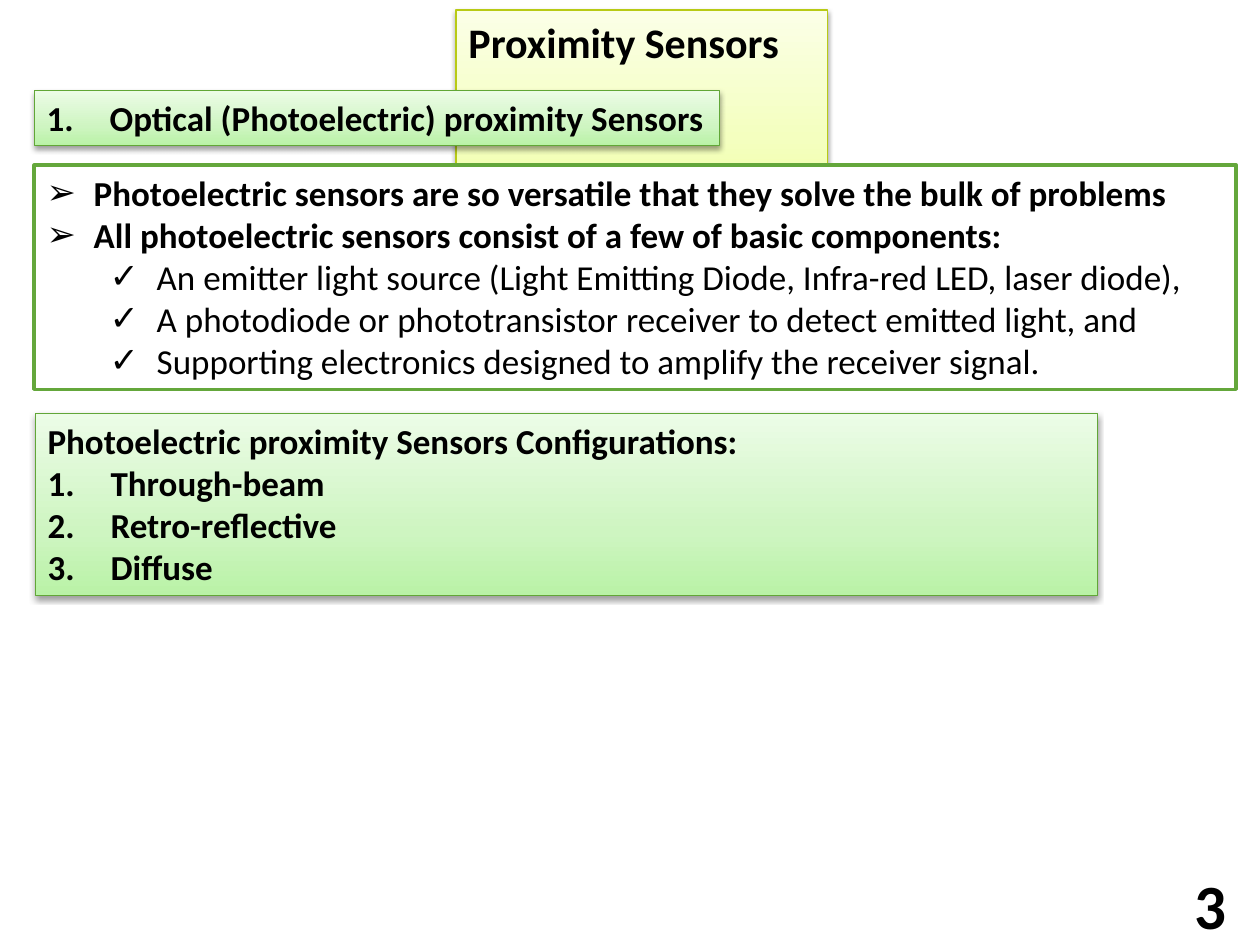
from copy import deepcopy
from lxml.etree import SubElement as Sub
from pptx import Presentation
from pptx.dml.color import RGBColor as RGB
from pptx.enum.shapes import MSO_SHAPE as SHAPE
from pptx.enum.text import MSO_ANCHOR as ANCHOR, MSO_AUTO_SIZE as AUTO, PP_ALIGN as ALIGN
from pptx.oxml.ns import qn
from pptx.util import Cm, Pt

LIME = [(0, "F0FFA5"), (0.35, "F4FFBF"), (1, "FBFFE7")]
GREEN = [(0, "B9F2A6"), (0.35, "CEF5C1"), (1, "ECFCE7")]

MARKS = {
    "num": (1.27, 1.27, "buAutoNum", {"type": "arabicPeriod"}),
    "arrow": (0.95, 0.95, "buChar", {"char": "➢"}),
    "check": (2.22, 0.95, "buChar", {"char": "✓"}),
}

TITLE = {
    "at": (9.19, 0.2, 7.49, 1.28), "fill": LIME, "line": ("B8CA15", 0.75), "size": 24,
    "text": [("", True, "Proximity Sensors")],
}
BOXES = [
    {"at": (0.69, 1.83, 13.82, 1.11), "fill": GREEN, "line": ("61A637", 0.75), "size": 20,
     "text": [("num", True, "Optical (Photoelectric) proximity Sensors")]},
    {"at": (0.69, 3.33, 24.23, 4.52), "fill": "FFFFFF", "line": ("64A73B", 2), "size": 20,
     "text": [
         ("arrow", True, "Photoelectric sensors are so versatile that they solve the bulk of problems"),
         ("arrow", True, "All photoelectric sensors consist of a few of basic components:"),
         ("check", False, "An emitter light source (Light Emitting Diode, Infra-red LED, laser diode),"),
         ("check", False, "A photodiode or phototransistor receiver to detect emitted light, and"),
         ("check", False, "Supporting electronics designed to amplify the receiver signal."),
     ]},
    {"at": (0.71, 8.33, 21.41, 3.68), "fill": GREEN, "line": ("61A637", 0.75), "size": 20,
     "text": [
         ("", True, "Photoelectric proximity Sensors Configurations:"),
         ("num", True, "Through-beam"),
         ("num", True, "Retro-reflective"),
         ("num", True, "Diffuse"),
     ]},
]
NUMBER = {"at": (22.91, 17.73, 2.06, 1.02), "size": 36, "text": [("", True, "3")]}


def tint(code):
    return RGB.from_string(code)


def put(obj, **vals):
    for key, val in vals.items():
        setattr(obj, key, val)


def place(at):
    return [Cm(n) for n in at]


def mark(para, kind):
    left, hang, tag, attrs = MARKS[kind]
    props = para._p.get_or_add_pPr()
    props.set("marL", str(Cm(left)))
    props.set("indent", str(-Cm(hang)))
    Sub(props, qn("a:buFont"), typeface="+mj-lt" if kind == "num" else "Arial")
    Sub(props, qn(f"a:{tag}"), attrs)


def write(shape, data, align=ALIGN.LEFT, anchor=ANCHOR.TOP, fit=AUTO.SHAPE_TO_FIT_TEXT):
    frame = shape.text_frame
    put(frame, word_wrap=True, auto_size=fit, vertical_anchor=anchor)
    for i, (kind, bold, words) in enumerate(data["text"]):
        para = frame.add_paragraph() if i else frame.paragraphs[0]
        put(para, alignment=align, level=int(kind == "check"))
        if kind:
            mark(para, kind)
        run = para.add_run()
        run.text = words
        put(run.font, name="Calibri", size=Pt(data["size"]), bold=bold)
        run.font.color.rgb = tint("000000")


def shade(shape, stops):
    fill = shape.fill
    fill.gradient()
    fill.gradient_angle = 90
    group = shape._element.spPr.find(".//" + qn("a:gsLst"))
    group.append(deepcopy(group[-1]))
    for stop, (pos, code) in zip(fill.gradient_stops, stops):
        stop.position = pos
        stop.color.rgb = tint(code)
    glow = shape._element.spPr.find(qn("a:effectLst"))
    cast = Sub(glow, qn("a:outerShdw"), blurRad="40000", dist="20000", dir="5400000", rotWithShape="0")
    color = Sub(cast, qn("a:srgbClr"), val="000000")
    Sub(color, qn("a:alpha"), val="38000")


def dress(shape, data):
    code, width = data["line"]
    shape.line.color.rgb = tint(code)
    shape.line.width = Pt(width)
    shape.shadow.inherit = False
    if isinstance(data["fill"], str):
        shape.fill.solid()
        shape.fill.fore_color.rgb = tint(data["fill"])
    else:
        shade(shape, data["fill"])
    write(shape, data)


def main():
    deck = Presentation()
    put(deck, slide_width=Cm(25.4), slide_height=Cm(19.05))
    slide = deck.slides.add_slide(deck.slide_layouts[5])
    title = slide.shapes.title
    put(title, **dict(zip(("left", "top", "width", "height"), place(TITLE["at"]))))
    dress(title, TITLE)
    for data in BOXES:
        dress(slide.shapes.add_shape(SHAPE.RECTANGLE, *place(data["at"])), data)
    page = slide.shapes.add_textbox(*place(NUMBER["at"]))
    write(page, NUMBER, ALIGN.RIGHT, ANCHOR.MIDDLE, AUTO.NONE)
    deck.save("out.pptx")


if __name__ == "__main__":
    main()
